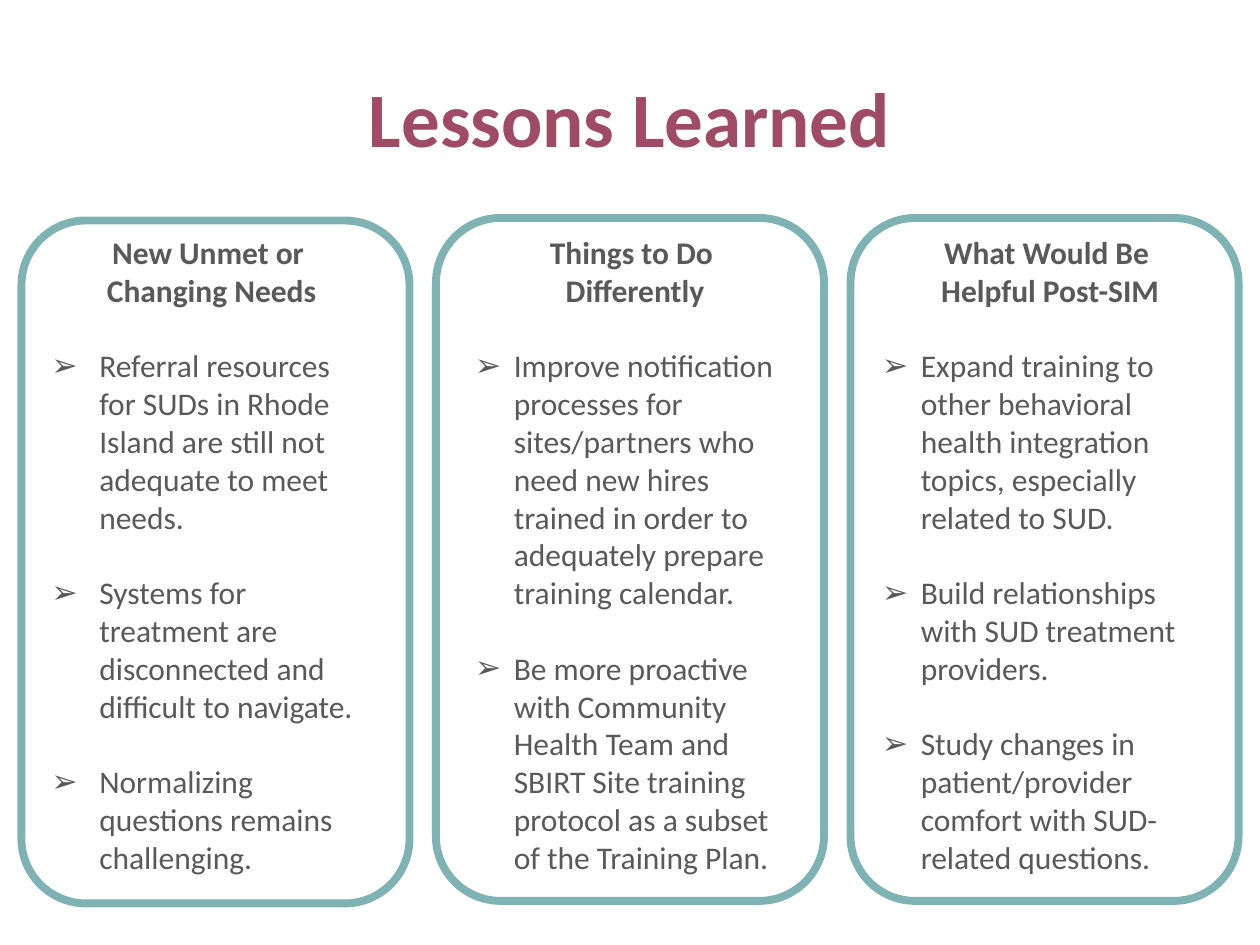
from pptx import Presentation
from pptx.dml.color import RGBColor
from pptx.enum.shapes import MSO_SHAPE
from pptx.enum.text import MSO_ANCHOR, PP_ALIGN
from pptx.oxml.ns import qn
from pptx.util import Inches, Pt
from lxml.etree import SubElement

COLORS = {"title": "9F4B65", "text": "595959", "border": "006666"}
FONT = "Calibri"
LINE_HEIGHT = Pt(21.6)

# Card grid, in inches
FIRST_LEFT, COLUMN_STEP = 0.17, 3.29
CARD_WIDTH, CARD_HEIGHT = 3.08, 5.42
TEXT_TOP, TEXT_HEIGHT = 1.8, 5.25
MARGIN = 0.09

# Card top, text offset in the card, text width, hanging indent, heading, lessons
columns = [
    (1.75, 0.05, 2.83, 0.38, "New Unmet or \nChanging Needs", [
        "Referral resources for SUDs in Rhode Island are still not adequate to meet needs.",
        "Systems for treatment are disconnected and difficult to navigate.",
        "Normalizing questions remains challenging.",
    ]),
    (1.73, 0.12, 2.83, 0.31, "Things to Do \nDifferently", [
        "Improve notification processes for sites/partners who need new hires trained "
        "in order to adequately prepare training calendar.",
        "Be more proactive with Community Health Team and SBIRT Site training protocol "
        "as a subset of the Training Plan.",
    ]),
    (1.73, 0.06, 2.96, 0.31, "What Would Be \nHelpful Post-SIM", [
        "Expand training to other behavioral health integration topics, especially related to SUD.",
        "Build relationships with SUD treatment providers.",
        "Study changes in patient/provider comfort with SUD-related questions.",
    ]),
]


def write(paragraph, text, size, color, bold=False):
    paragraph.text = text
    paragraph.font.name = FONT
    paragraph.font.size = Pt(size)
    paragraph.font.bold = bold
    paragraph.font.color.rgb = RGBColor.from_string(COLORS[color])


def indent(paragraph, left, hanging=0):
    properties = paragraph._p.get_or_add_pPr()
    properties.set("marL", str(Inches(left)))
    properties.set("indent", str(-Inches(hanging)))
    if hanging:
        bullet_font = SubElement(properties, qn("a:buFont"), typeface="Wingdings")
        bullet_font.set("typeface", "Arial")
        SubElement(properties, qn("a:buChar"), char="➢")


presentation = Presentation()
presentation.slide_width, presentation.slide_height = Inches(10), Inches(7.5)
slide = presentation.slides.add_slide(presentation.slide_layouts[6])

# Title
title = slide.shapes.add_textbox(Inches(0.5), Inches(0.3), Inches(9), Inches(1.25)).text_frame
title.word_wrap = True
title.vertical_anchor = MSO_ANCHOR.MIDDLE
write(title.paragraphs[0], "Lessons Learned", 44, "title", bold=True)
title.paragraphs[0].alignment = PP_ALIGN.CENTER

for index, (top, offset, width, hanging, heading, lessons) in enumerate(columns):
    left = FIRST_LEFT + index * COLUMN_STEP

    # Rounded card with a half-transparent border
    card = slide.shapes.add_shape(MSO_SHAPE.ROUNDED_RECTANGLE, Inches(left), Inches(top),
                                  Inches(CARD_WIDTH), Inches(CARD_HEIGHT))
    card.shadow.inherit = False
    card.fill.background()
    card.line.width = Pt(4.5)
    card.line.color.rgb = RGBColor.from_string(COLORS["border"])
    border_color = card.line._ln.find(".//" + qn("a:srgbClr"))
    SubElement(border_color, qn("a:alpha"), val="50000")

    # Heading
    body = slide.shapes.add_textbox(Inches(left + offset), Inches(TEXT_TOP),
                                    Inches(width), Inches(TEXT_HEIGHT)).text_frame
    body.word_wrap = True
    write(body.paragraphs[0], heading, 18, "text", bold=True)
    body.paragraphs[0].alignment = PP_ALIGN.CENTER
    indent(body.paragraphs[0], MARGIN)

    # Bulleted lessons, one line apart
    for lesson in lessons:
        item = body.add_paragraph()
        item.space_before = LINE_HEIGHT
        indent(item, MARGIN + hanging, hanging)
        write(item, lesson, 18, "text")

presentation.save("out.pptx")
